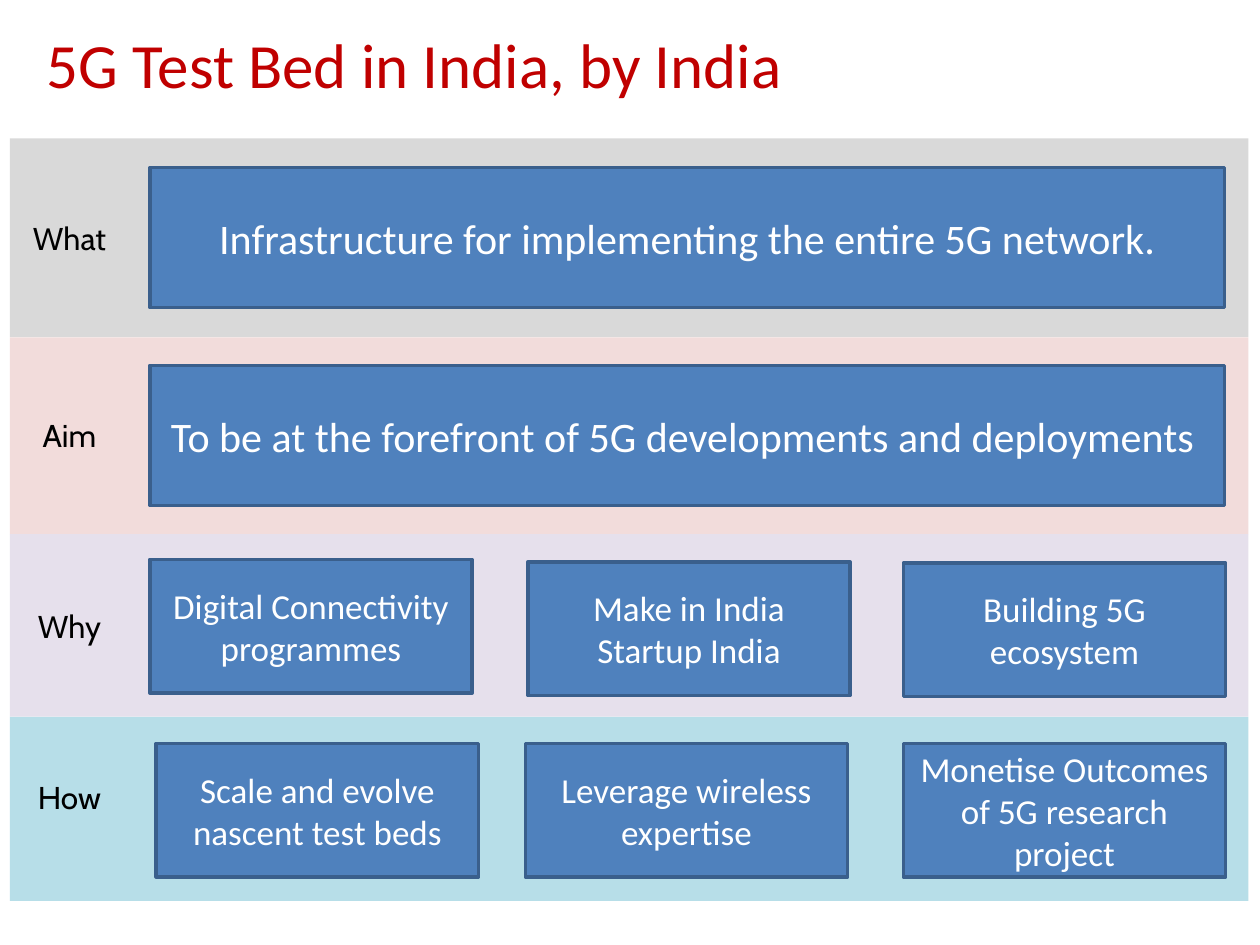
"""Build the 5G test bed slide: four labelled bands of boxes."""
from pptx import Presentation
from pptx.dml.color import RGBColor
from pptx.enum.shapes import MSO_SHAPE
from pptx.enum.text import MSO_ANCHOR, MSO_AUTO_SIZE, PP_ALIGN
from pptx.util import Cm, Pt

RECT = MSO_SHAPE.RECTANGLE
MID = MSO_ANCHOR.MIDDLE
LEFT, CENTER = PP_ALIGN.LEFT, PP_ALIGN.CENTER
FIXED = MSO_AUTO_SIZE.NONE

THEME = {
    "font": "Calibri", "label_font": "Cabin",
    "title": "C00000", "label": "000000", "text": "FFFFFF",
    "box": "4F81BD", "edge": "3A5F8C",
    "title_pt": 36, "wide_pt": 24, "small_pt": 20, "label_pt": 18, "edge_pt": 2,
}
TITLE = "5G Test Bed in India, by India"
WIDE, SMALL = (21.67, 2.82), (6.5, 2.69)
BAND_X, BAND_W, END = 0.2, 24.97, 18.16
LABEL_X, LABEL_W, LABEL_H = 0.52, 1.76, 1.27

BANDS = [
    {"label": "What", "fill": "D9D9D9", "top": 2.79, "mid": 4.79,
     "size": WIDE, "pt": "wide_pt",
     "boxes": [(3.02, 3.38, ["Infrastructure for implementing the entire 5G network."])]},
    {"label": "Aim", "fill": "F2DCDB", "top": 6.8, "mid": 8.77,
     "size": WIDE, "pt": "wide_pt",
     "boxes": [(3.02, 7.37, ["To be at the forefront of 5G developments and deployments "])]},
    {"label": "Why", "fill": "E6E0EC", "top": 10.77, "mid": 12.62,
     "size": SMALL, "pt": "small_pt",
     "boxes": [(3.02, 11.28, ["Digital Connectivity programmes"]),
               (10.64, 11.33, ["Make in India", "Startup India"]),
               (18.21, 11.35, ["Building 5G ecosystem"])]},
    {"label": "How", "fill": "B7DEE8", "top": 14.45, "mid": 16.07,
     "size": SMALL, "pt": "small_pt",
     "boxes": [(3.15, 14.99, ["Scale and evolve nascent test beds"]),
               (10.59, 14.99, ["Leverage wireless expertise"]),
               (18.21, 14.99, ["Monetise Outcomes of 5G research project"])]},
]


def color(name):
    return RGBColor.from_string(THEME.get(name, name))


def write(shape, lines, size, ink, font="font", align=CENTER):
    frame = shape.text_frame
    frame.vertical_anchor = MID
    frame.auto_size = FIXED
    frame.word_wrap = True
    for i, line in enumerate(lines):
        para = frame.add_paragraph() if i else frame.paragraphs[0]
        para.alignment = align
        run = para.add_run()
        run.text = line
        run.font.name = THEME[font]
        run.font.size = Pt(THEME[size])
        run.font.color.rgb = color(ink)


def add_rect(slide, x, y, w, h, fill, edge=None):
    shape = slide.shapes.add_shape(RECT, Cm(x), Cm(y), Cm(w), Cm(h))
    shape.shadow.inherit = False
    shape.fill.solid()
    shape.fill.fore_color.rgb = color(fill)
    if edge:
        shape.line.color.rgb = color(edge)
        shape.line.width = Pt(THEME["edge_pt"])
    else:
        shape.line.fill.background()
    return shape


def add_label(slide, text, mid):
    box = slide.shapes.add_textbox(
        Cm(LABEL_X), Cm(mid - LABEL_H / 2), Cm(LABEL_W), Cm(LABEL_H))
    write(box, [text], "label_pt", "label", "label_font")
    box.text_frame.margin_left = box.text_frame.margin_right = 0
    box.text_frame.word_wrap = False


def add_band(slide, band, end):
    add_rect(slide, BAND_X, band["top"], BAND_W, end - band["top"], band["fill"])
    for x, y, lines in band["boxes"]:
        box = add_rect(slide, x, y, *band["size"], "box", "edge")
        write(box, lines, band["pt"], "text")
    add_label(slide, band["label"], band["mid"])


def main():
    deck = Presentation()
    deck.slide_width, deck.slide_height = Cm(25.4), Cm(19.05)
    slide = deck.slides.add_slide(deck.slide_layouts[5])
    title = slide.shapes.title
    title.left, title.top = Cm(0.69), Cm(0.28)
    title.width, title.height = Cm(24), Cm(2)
    write(title, [TITLE], "title_pt", "title", align=LEFT)
    ends = [band["top"] for band in BANDS[1:]] + [END]
    for band, end in zip(BANDS, ends):
        add_band(slide, band, end)
    deck.save("out.pptx")


if __name__ == "__main__":
    main()
